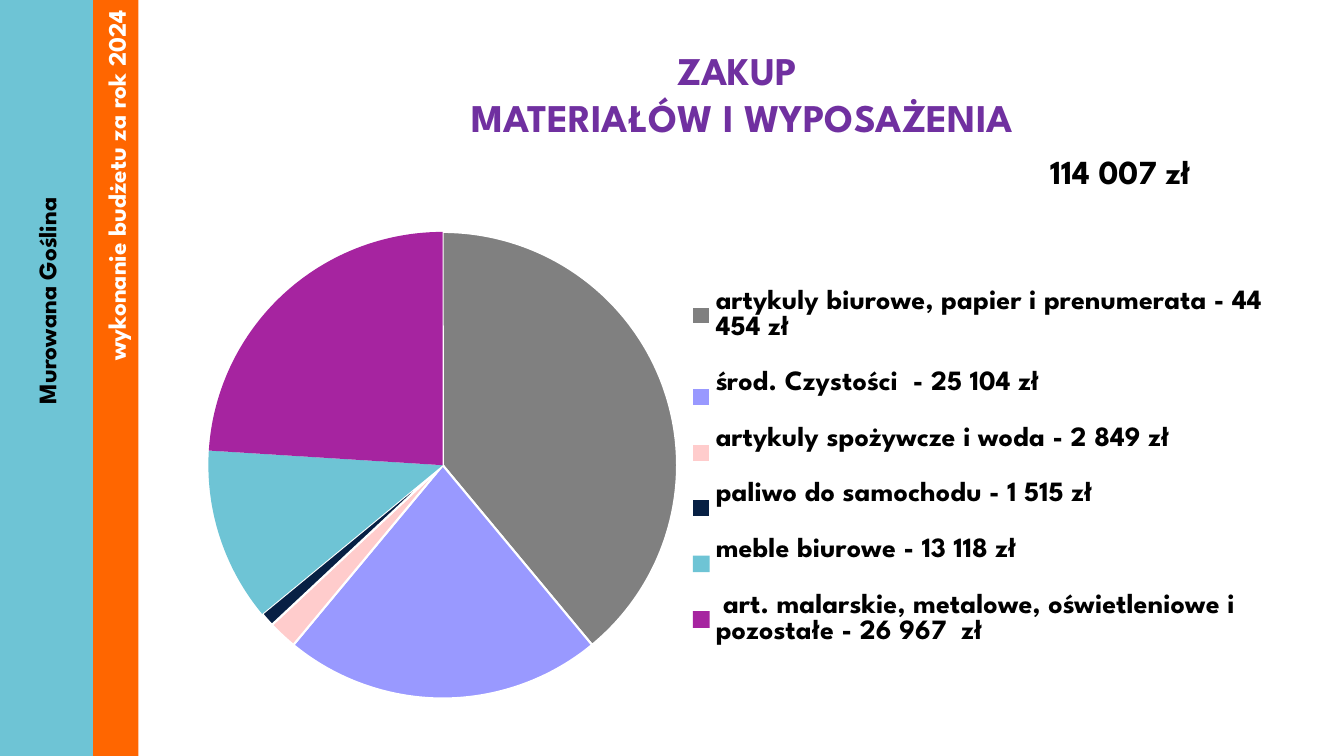
from dataclasses import dataclass

import lxml.etree
import pptx
import pptx.chart.data
import pptx.dml.color
import pptx.enum.chart
import pptx.enum.shapes
import pptx.enum.text
import pptx.oxml.ns
import pptx.util

Pt = pptx.util.Pt
Align = pptx.enum.text.PP_ALIGN


@dataclass(frozen=True)
class Theme:
    font: str = "League Spartan"
    chart_font: str = "Calibri"
    teal: str = "6EC4D5"
    orange: str = "FF6600"
    purple: str = "7030A0"
    black: str = "000000"
    white: str = "FFFFFF"
    title_size: float = 28
    total_size: float = 24
    legend_size: float = 20
    band_size: float = 18
    chart_size: float = 9.3


@dataclass(frozen=True)
class Frame:
    left: float
    top: float
    width: float
    height: float

    def lengths(self) -> tuple:
        return Pt(self.left), Pt(self.top), Pt(self.width), Pt(self.height)


@dataclass(frozen=True)
class Label:
    frame: Frame
    lines: tuple
    size: float
    color: str
    align: Align = Align.LEFT
    rotation: float = 0
    wrap: bool = True


@dataclass(frozen=True)
class Expense:
    name: str
    percent: int
    color: str
    outlined: bool = True


THEME = Theme()
TEAL_BAND = Frame(0, 0, 66.5, 540)
ORANGE_BAND = Frame(66.5, 0, 32.4, 540)
CHART_FRAME = Frame(106.6, 164.9, 809.3, 334.8)
# The next two are measured from the corner of the chart.
PIE_FRAME = Frame(39.7, 0, 339.9, 334.8)
LEGEND_FRAME = Frame(382, 20, 420, 298)
LABELS = (
    Label(Frame(-57.6, 190.8, 181.4, 28.8), ("Murowana Goślina",),
          THEME.band_size, THEME.black, rotation=270, wrap=False),
    Label(Frame(152.2, 29.5, 756, 74.9), ("ZAKUP ", "MATERIAŁÓW I WYPOSAŻENIA"),
          THEME.title_size, THEME.purple, Align.CENTER),
    Label(Frame(743, 104.4, 165.6, 36), ("114 007 zł",),
          THEME.total_size, THEME.black),
)
EXPENSES = (
    Expense("artykuly biurowe, papier i prenumerata - 44 454 zł", 39, "808080"),
    Expense("środ. Czystości  - 25 104 zł", 22, "9999FF"),
    Expense("artykuly spożywcze i woda - 2 849 zł", 2, "FFCCCC"),
    Expense("paliwo do samochodu - 1 515 zł", 1, "072044"),
    Expense("meble biurowe - 13 118 zł", 12, THEME.teal, outlined=False),
    Expense(" art. malarskie, metalowe, oświetleniowe i pozostałe - 26 967  zł",
            24, "A624A0", outlined=False),
)


def rgb(color: str) -> pptx.dml.color.RGBColor:
    return pptx.dml.color.RGBColor.from_string(color)


def style_font(font, size: float, color: str, name: str = THEME.font, bold: bool = True) -> None:
    font.name, font.size, font.bold = name, Pt(size), bold
    font.color.rgb = rgb(color)


def add_band(slide, frame: Frame, color: str):
    band = slide.shapes.add_shape(pptx.enum.shapes.MSO_SHAPE.RECTANGLE, *frame.lengths())
    band.shadow.inherit = False
    band.fill.solid()
    band.fill.fore_color.rgb = rgb(color)
    band.line.fill.background()
    return band


def add_lines(para, lines: tuple, size: float, color: str) -> None:
    for index, line in enumerate(lines):
        if index:
            para.add_line_break()
        span = para.add_run()
        span.text = line
        style_font(span.font, size, color)


def add_label(slide, label: Label) -> None:
    box = slide.shapes.add_textbox(*label.frame.lengths())
    box.rotation = label.rotation
    box.text_frame.word_wrap = label.wrap
    box.text_frame.auto_size = pptx.enum.text.MSO_AUTO_SIZE.SHAPE_TO_FIT_TEXT
    para = box.text_frame.paragraphs[0]
    para.alignment = label.align
    add_lines(para, label.lines, label.size, label.color)


def write_on_band(band, text: str) -> None:
    """Set white text running upwards, ending at the top of the band."""
    frame = band.text_frame
    frame.vertical_anchor = pptx.enum.text.MSO_ANCHOR.MIDDLE
    frame._txBody.bodyPr.set("vert", "vert270")
    para = frame.paragraphs[0]
    para.alignment = Align.RIGHT
    add_lines(para, (text,), THEME.band_size, THEME.white)


def place_in_chart(element, index: int, frame: Frame, inner: bool = False) -> None:
    """Fix a chart part at a frame, stored as fractions of the chart area."""
    qn = pptx.oxml.ns.qn
    for old in element.findall(qn("c:layout")):
        element.remove(old)
    layout = lxml.etree.Element(qn("c:layout"))
    manual = lxml.etree.SubElement(layout, qn("c:manualLayout"))
    settings = {"layoutTarget": "inner"} if inner else {}
    settings |= {
        "xMode": "edge", "yMode": "edge",
        "x": frame.left / CHART_FRAME.width, "y": frame.top / CHART_FRAME.height,
        "w": frame.width / CHART_FRAME.width, "h": frame.height / CHART_FRAME.height,
    }
    for tag, value in settings.items():
        lxml.etree.SubElement(manual, qn(f"c:{tag}")).set("val", str(value))
    element.insert(index, layout)


def add_pie(slide) -> None:
    data = pptx.chart.data.CategoryChartData()
    data.categories = [expense.name for expense in EXPENSES]
    data.add_series("Series 1", [expense.percent for expense in EXPENSES])
    chart = slide.shapes.add_chart(
        pptx.enum.chart.XL_CHART_TYPE.PIE, *CHART_FRAME.lengths(), data).chart
    style_font(chart.font, THEME.chart_size, THEME.black, THEME.chart_font, bold=False)
    chart.has_title = False
    plot = chart.plots[0]
    plot.vary_by_categories = True
    for index, expense in enumerate(EXPENSES):
        slice_format = plot.series[0].points[index].format
        slice_format.fill.solid()
        slice_format.fill.fore_color.rgb = rgb(expense.color)
        if expense.outlined:
            slice_format.line.color.rgb = rgb(THEME.white)
            slice_format.line.width = Pt(1.5)
        else:
            slice_format.line.fill.background()
    chart.has_legend = True
    legend = chart.legend
    legend.position = pptx.enum.chart.XL_LEGEND_POSITION.RIGHT
    legend.include_in_layout = False
    style_font(legend.font, THEME.legend_size, THEME.black)
    place_in_chart(chart._chartSpace.chart.plotArea, 0, PIE_FRAME, inner=True)
    place_in_chart(legend._element, 1, LEGEND_FRAME)


def main() -> None:
    deck = pptx.Presentation()
    deck.slide_width, deck.slide_height = Pt(960), Pt(540)
    page = deck.slides.add_slide(deck.slide_layouts[6])
    add_band(page, TEAL_BAND, THEME.teal)
    write_on_band(add_band(page, ORANGE_BAND, THEME.orange), "wykonanie budżetu za rok 2024")
    add_pie(page)
    for label in LABELS:
        add_label(page, label)
    deck.save("out.pptx")


if __name__ == "__main__":
    main()
